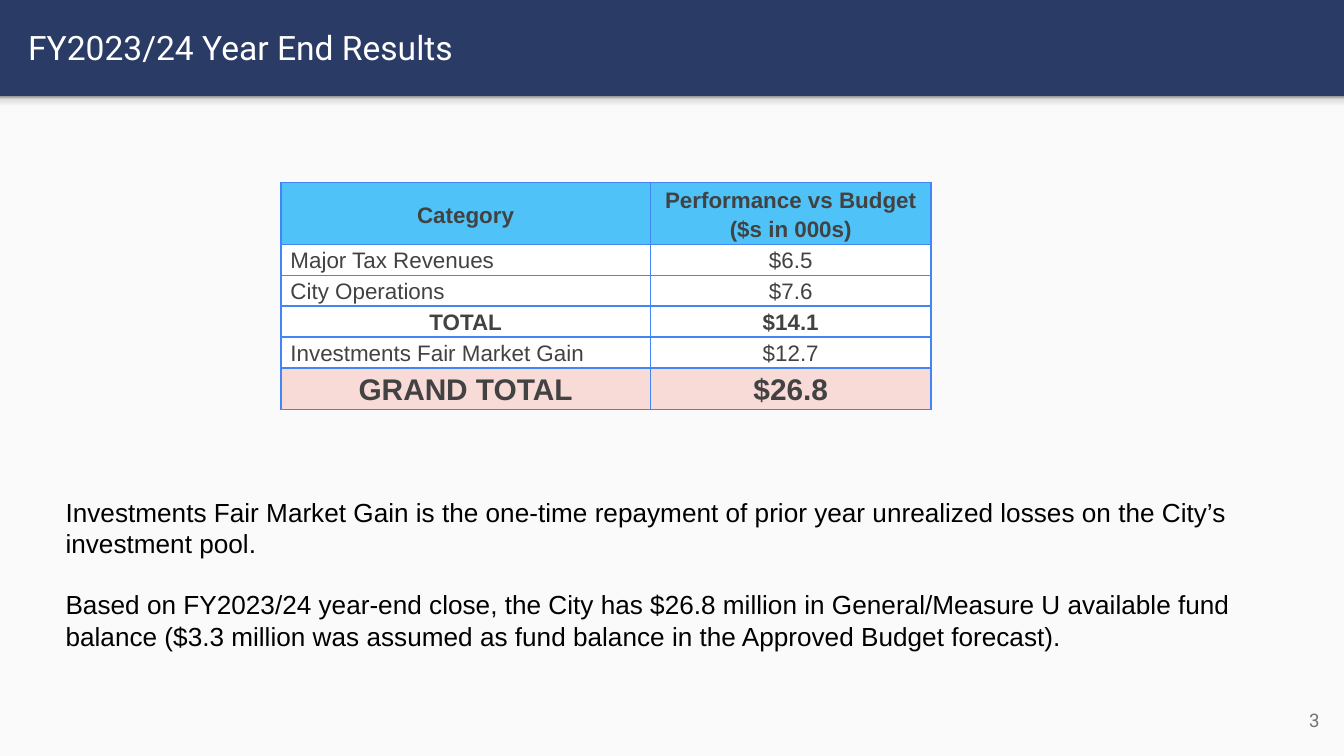
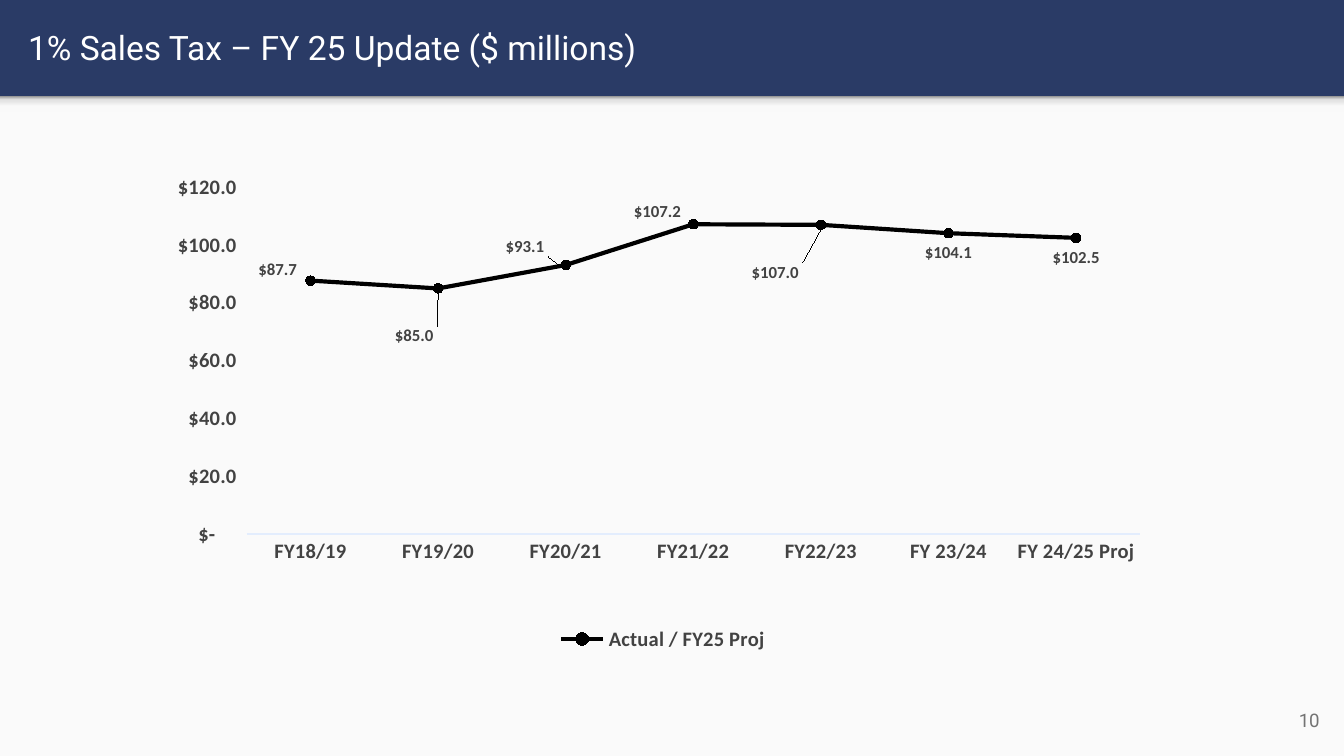
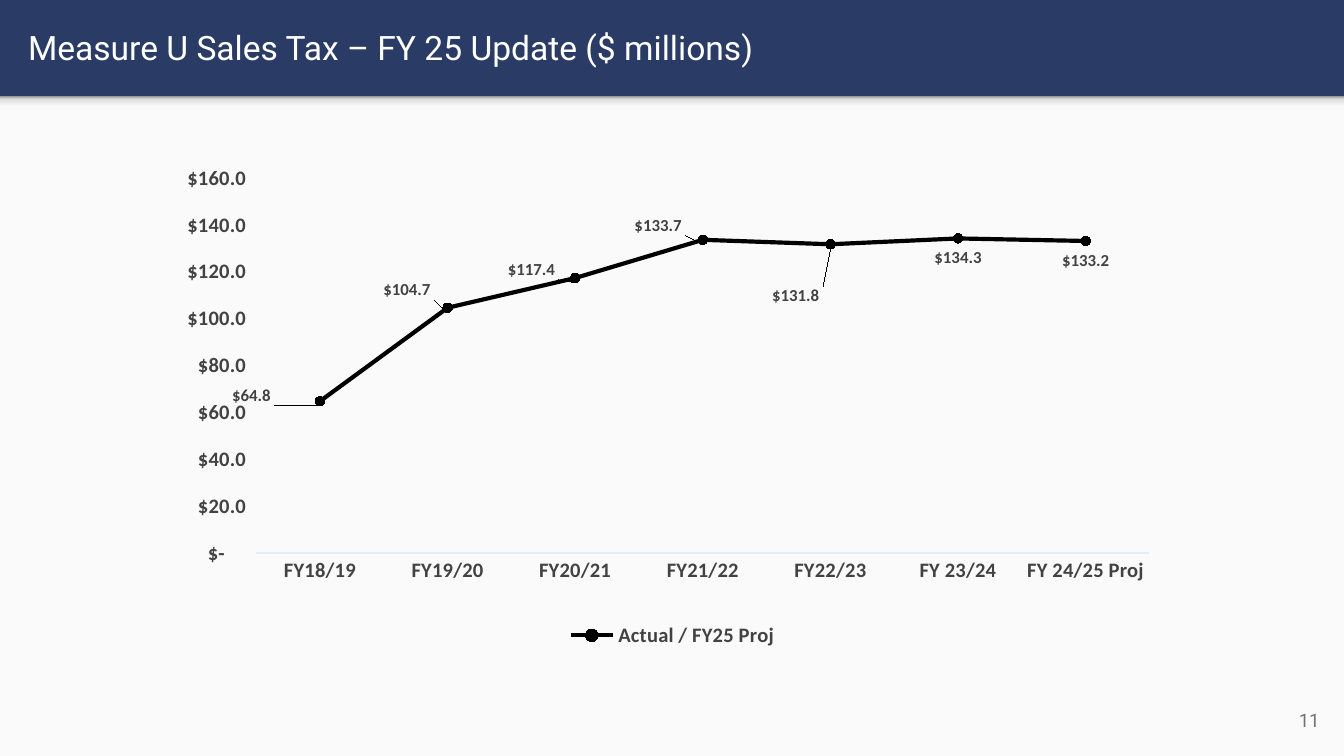
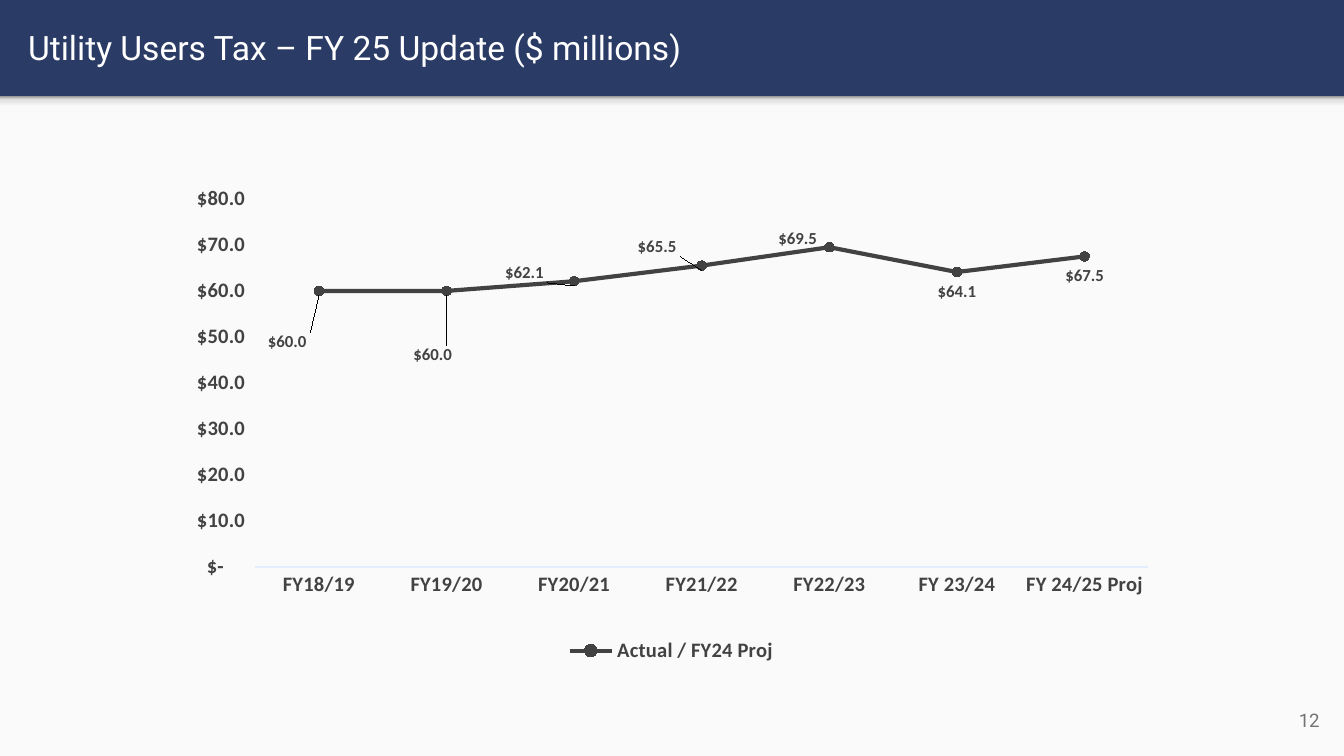
from copy import deepcopy

from lxml import etree
from pptx import Presentation
from pptx import util as u
from pptx.chart.data import CategoryChartData
from pptx.dml.color import RGBColor
from pptx.enum import chart as ch, shapes, text
from pptx.oxml import parse_xml
from pptx.oxml.ns import nsdecls, qn

Cm, Pt = u.Cm, u.Pt

# Colours
NAVY = RGBColor(0x2A, 0x3B, 0x66)
PAPER = RGBColor(0xFA, 0xFA, 0xFA)
WHITE = RGBColor(0xFF, 0xFF, 0xFF)
BLACK = RGBColor(0, 0, 0)
INK = RGBColor(0x42, 0x42, 0x42)
GREY = RGBColor(0x73, 0x73, 0x73)
BLUE = RGBColor(0x42, 0x85, 0xF4)
SKY = RGBColor(0x4F, 0xC3, 0xF7)
PINK = RGBColor(0xF8, 0xDA, 0xD7)
PALE = RGBColor(0xE3, 0xED, 0xFD)
SHADE = [(0, "F9F9F9"), (0.36, "F9F9F9"), (0.8, "DEDEDE"), (1, "999999")]

# Shared sizes and styles
WIDE, HIGH, BAND = 25.4, 14.29, 1.82
TITLE = dict(size=Pt(18), name="Roboto", color=WHITE)
PAGE = dict(size=Pt(10), name="Roboto", color=GREY)
BODY = dict(size=Pt(14), name="Arial", color=BLACK)
CELL = dict(size=Pt(12), name="Arial", color=INK, bold=False)
AXIS = dict(size=Pt(11), name="Calibri", color=INK, bold=True)
LABEL = dict(AXIS, size=Pt(9))
LEFT, MID, RIGHT = text.PP_ALIGN.LEFT, text.PP_ALIGN.CENTER, text.PP_ALIGN.RIGHT
MONEY = '_("$"* #,##0.0_);_("$"* \\(#,##0.0\\);_("$"* "-"??_);_(@_)'

# Content
ROWS = [
    # label, amount, height, label alignment, fill, font changes
    ("Category", "Performance vs Budget ($s in 000s)", 1.1, MID, SKY, dict(bold=True)),
    ("Major Tax Revenues", "$6.5", 0.55, LEFT, WHITE, {}),
    ("City Operations", "$7.6", 0.55, LEFT, WHITE, {}),
    ("TOTAL", "$14.1", 0.55, MID, WHITE, dict(bold=True)),
    ("Investments Fair Market Gain", "$12.7", 0.55, LEFT, WHITE, {}),
    ("GRAND TOTAL", "$26.8", 0.72, MID, PINK, dict(bold=True, size=Pt(16))),
]
NOTES = [
    "Investments Fair Market Gain is the one-time repayment of prior year "
    "unrealized losses on the City’s investment pool.",
    "Based on FY2023/24 year-end close, the City has $26.8 million in "
    "General/Measure U available fund balance ($3.3 million was assumed as "
    "fund balance in the Approved Budget forecast).",
]
YEARS = ["FY18/19", "FY19/20", "FY20/21", "FY21/22", "FY22/23", "FY 23/24", "FY 24/25 Proj"]
# box is in cm; plot height and label shifts are percent of the chart
TAXES = [
    dict(title="1% Sales Tax", page=10, box=(3.12, 2.62, 18.82, 9.8), plot=66.9,
         name="Actual / FY25 Proj", color=BLACK, top=120, step=20,
         vals=(87.7, 85, 93.1, 107.2, 107, 104.1, 102.5),
         shifts=[(-3.3, -5.8), (-2.4, 5.4), (-4.1, -7.3), (-3.6, -6.2), (-4.6, 5.4)]),
    dict(title="Measure U Sales Tax", page=11, box=(3.3, 2.44, 18.82, 9.91), plot=71.5,
         name="Actual / FY25 Proj", color=BLACK, top=160, step=20,
         vals=(64.8, 104.7, 117.4, 133.7, 131.8, 134.3, 133.2),
         shifts=[(-6.9, -4.8), (-4.1, -7.1), (-4.4, -5.3), (-4.5, -6.5), (-3.5, 6.1)]),
    dict(title="Utility Users Tax", page=12, box=(3.28, 2.84, 18.82, 9.8), plot=71,
         name="Actual / FY24 Proj", color=INK, top=80, step=10,
         vals=(60, 60, 62.1, 65.5, 69.5, 64.1, 67.5),
         shifts=[(-3.2, 6.1), (-1.4, 8.6), (-5, -5.4), (-4.5, -7.5), (-3.2, -5.4)]),
]


def put(obj, **vals):
    for key, val in vals.items():
        setattr(obj, key, val)


def style(font, color, **vals):
    put(font, **vals)
    font.color.rgb = color


def write(frame, lines, look, align=LEFT, gap=0):
    frame.word_wrap = True
    for i, line in enumerate(lines):
        par = frame.add_paragraph() if i else frame.paragraphs[0]
        put(par, alignment=align, space_before=Pt(gap if i else 0))
        run = par.add_run()
        run.text = line
        style(run.font, **look)


def text_box(slide, box, lines, look, anchor=text.MSO_ANCHOR.TOP, **opts):
    frame = slide.shapes.add_textbox(*map(Cm, box)).text_frame
    write(frame, lines, look, **opts)
    put(frame, vertical_anchor=anchor)
    return frame


def block(slide, box):
    rect = slide.shapes.add_shape(shapes.MSO_SHAPE.RECTANGLE, *map(Cm, box))
    rect.shadow.inherit = False
    rect.line.fill.background()
    return rect


def set_back(layout, slide):
    """Give the layout its navy band, light panel and soft edge."""
    fill = layout.background.fill
    fill.solid()
    fill.fore_color.rgb = NAVY
    panel = block(slide, (0, BAND, WIDE, HIGH - BAND))
    panel.fill.solid()
    panel.fill.fore_color.rgb = PAPER
    edge = block(slide, (0, BAND, WIDE, 0.3))
    edge.fill.gradient()
    edge.fill.gradient_angle = 90
    stops = edge.fill.gradient_stops
    items = stops[0]._gs.getparent()
    for _ in range(len(SHADE) - len(stops)):
        items.append(deepcopy(items[0]))
    for stop, (pos, tone) in zip(edge.fill.gradient_stops, SHADE):
        stop.position = pos
        stop.color.rgb = RGBColor.from_string(tone)
    for i, part in enumerate((panel, edge)):
        layout.shapes._spTree.insert(2 + i, part._element)


def new_slide(deck, title, page):
    slide = deck.slides.add_slide(deck.slide_layouts[5])
    head = slide.shapes.title
    put(head, left=Cm(0.28), top=Cm(0.05), width=Cm(24.51), height=Cm(1.68))
    frame = head.text_frame
    write(frame, [title], TITLE)
    put(frame, vertical_anchor=text.MSO_ANCHOR.MIDDLE, auto_size=text.MSO_AUTO_SIZE.NONE)
    foot = text_box(slide, (23.67, 13.06, 1.52, 1.09), [str(page)], PAGE,
                    text.MSO_ANCHOR.MIDDLE, align=RIGHT)
    for item in (frame, foot):
        for side in ("left", "right", "top", "bottom"):
            setattr(item, "margin_" + side, Cm(0.25))
    return slide


# Table
def frame_cell(cell):
    props = cell._tc.get_or_add_tcPr()
    for i, side in enumerate(("lnL", "lnR", "lnT", "lnB")):
        props.insert(i, parse_xml(
            f'<a:{side} {nsdecls("a")} w="12700"><a:solidFill>'
            f'<a:srgbClr val="{BLUE}"/></a:solidFill></a:{side}>'))


def add_grid(slide):
    high = sum(row[2] for row in ROWS)
    grid = slide.shapes.add_table(
        len(ROWS), 2, Cm(5.31), Cm(3.45), Cm(12.29), Cm(high)).table
    put(grid, first_row=False, horz_banding=False)
    for col, wide in zip(grid.columns, (6.98, 5.31)):
        col.width = Cm(wide)
    for r, (name, sum_, tall, side, fill, extra) in enumerate(ROWS):
        grid.rows[r].height = Cm(tall)
        for c, (word, align) in enumerate(((name, side), (sum_, MID))):
            cell = grid.cell(r, c)
            put(cell, margin_left=Cm(0.18), margin_right=Cm(0.18),
                margin_top=0, margin_bottom=0)
            if r == 0:
                cell.vertical_anchor = text.MSO_ANCHOR.MIDDLE
            write(cell.text_frame, [word], {**CELL, **extra}, align)
            cell.text_frame.paragraphs[0].line_spacing = 1.15
            cell.fill.solid()
            cell.fill.fore_color.rgb = fill
            frame_cell(cell)


# Line chart
def layout_xml(**vals):
    """Manual chart layout; modes are text, the rest are percent."""
    root = etree.Element(qn("c:layout"))
    man = etree.SubElement(root, qn("c:manualLayout"))
    for key, val in vals.items():
        word = val if isinstance(val, str) else f"{val / 100:.3f}"
        etree.SubElement(man, qn("c:" + key), val=word)
    return root


def set_axes(chart, top, step):
    cat, val = chart.category_axis, chart.value_axis
    for axis in (cat, val):
        put(axis, has_major_gridlines=False, major_tick_mark=ch.XL_TICK_MARK.NONE)
        style(axis.tick_labels.font, **AXIS)
    cat.format.line.color.rgb = PALE
    cat.format.line.width = Pt(0.75)
    val.format.line.fill.background()
    put(val, minimum_scale=0, maximum_scale=top, major_unit=step)
    put(val.tick_labels, number_format=MONEY, number_format_is_linked=False)


def set_labels(line, shifts):
    below = ch.XL_LABEL_POSITION.BELOW
    labels = line.data_labels
    put(labels, show_value=True, position=below, number_format=MONEY,
        number_format_is_linked=False)
    style(labels.font, **LABEL)
    for i, (dx, dy) in enumerate(shifts):
        label = line.points[i].data_label
        style(label.font, **LABEL)
        label.position = below
        node = labels._element.findall(qn("c:dLbl"))[i]
        node.find(qn("c:idx")).addnext(layout_xml(x=dx, y=dy))


def add_trend(slide, tax):
    data = CategoryChartData(number_format=MONEY)
    data.categories = YEARS
    data.add_series(tax["name"], tax["vals"])
    chart = slide.shapes.add_chart(
        ch.XL_CHART_TYPE.LINE_MARKERS, *map(Cm, tax["box"]), data).chart
    put(chart, has_title=False, has_legend=True)
    style(chart.font, BLUE, size=Pt(10), name="Calibri")
    put(chart.legend, position=ch.XL_LEGEND_POSITION.BOTTOM, include_in_layout=False)
    style(chart.legend.font, **AXIS)
    set_axes(chart, tax["top"], tax["step"])
    plot = chart.plots[0]
    plot.vary_by_categories = False
    line = plot.series[0]
    line.smooth = False
    line.format.line.color.rgb = tax["color"]
    line.format.line.width = Pt(2.25)
    mark = line.marker
    put(mark, style=ch.XL_MARKER_STYLE.CIRCLE, size=5)
    mark.format.fill.solid()
    mark.format.fill.fore_color.rgb = INK
    mark.format.line.color.rgb = tax["color"]
    set_labels(line, tax["shifts"])
    area = chart._chartSpace.chart.plotArea
    for old in area.findall(qn("c:layout")):
        area.remove(old)
    area.insert(0, layout_xml(layoutTarget="inner", xMode="edge", yMode="edge",
                              x=8.2, y=9.4, w=89.7, h=tax["plot"]))


def main():
    deck = Presentation()
    put(deck, slide_width=Cm(WIDE), slide_height=Cm(HIGH))

    # Year-end results
    slide = new_slide(deck, "FY2023/24 Year End Results", 3)
    set_back(slide.slide_layout, slide)
    add_grid(slide)
    text_box(slide, (0.99, 9.25, 22.68, 3.25), NOTES, BODY, gap=16)

    # Tax trends
    for tax in TAXES:
        slide = new_slide(deck, f"{tax['title']} – FY 25 Update ($ millions)", tax["page"])
        add_trend(slide, tax)

    deck.save("out.pptx")


if __name__ == "__main__":
    main()
